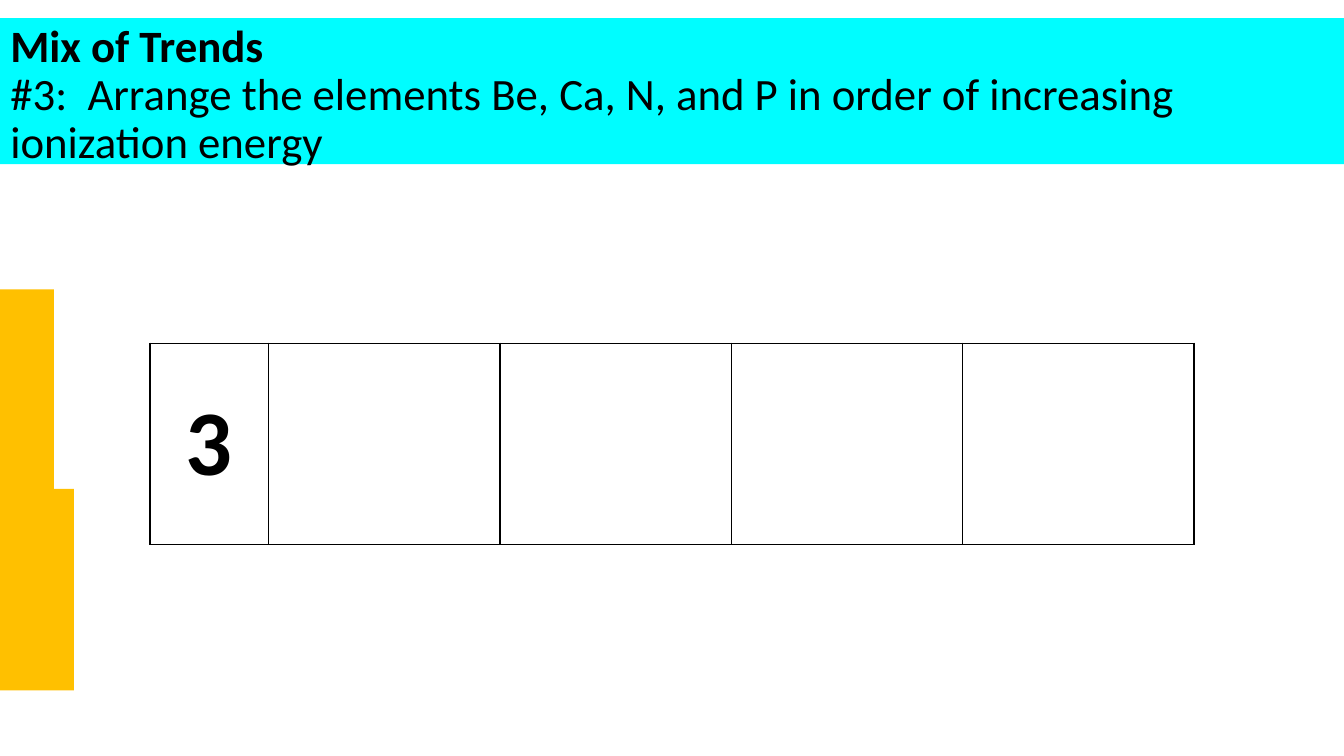
from lxml import etree
from pptx import Presentation
from pptx.dml.color import RGBColor
from pptx.enum.shapes import MSO_SHAPE
from pptx.enum.text import MSO_ANCHOR, PP_ALIGN
from pptx.oxml.ns import qn
from pptx.util import Cm, Pt

RECTANGLE = MSO_SHAPE.RECTANGLE
TOP, MIDDLE = MSO_ANCHOR.TOP, MSO_ANCHOR.MIDDLE
LEFT, CENTER = PP_ALIGN.LEFT, PP_ALIGN.CENTER
BLACK, CYAN, AMBER = "000000", "00FDFF", "FFC000"


def add_bar(left, top, width, height, color):
    bar = page.shapes.add_shape(RECTANGLE, Cm(left), Cm(top), Cm(width), Cm(height))
    bar.shadow.inherit = False
    bar.fill.solid()
    bar.fill.fore_color.rgb = RGBColor.from_string(color)
    bar.line.fill.background()
    return bar


def add_span(para, text, size, bold):
    span = para.add_run()
    span.text = text
    span.font.name = "Calibri"
    span.font.size = Pt(size)
    span.font.bold = bold
    span.font.color.rgb = RGBColor.from_string(BLACK)


deck = Presentation()
deck.slide_width, deck.slide_height = Cm(33.87), Cm(19.05)
page = deck.slides.add_slide(deck.slide_layouts[6])

# Question banner
banner = add_bar(0, 0.46, 33.87, 3.68, CYAN)
frame = banner.text_frame
frame.word_wrap = True
frame.vertical_anchor = TOP
frame.margin_left = frame.margin_right = Cm(0.26)
frame.margin_top, frame.margin_bottom = Cm(0.13), Cm(0)
para = frame.paragraphs[0]
para.alignment = LEFT
para.line_spacing = 0.9
add_span(para, "Mix of Trends", 32, True)
para.add_line_break()
add_span(para, "#3:  Arrange the elements Be, Ca, N, and P in order of increasing ionization energy", 32, False)

# Two equal tiles sliding in over the left edge
for left, top in ((-4.57, 12.32), (-5.07, 7.29)):
    add_bar(left, top, 6.43, 5.08, AMBER)

# Answer row: a number and four empty boxes
column_widths = [2.99] + [5.83] * 4
answer = page.shapes.add_table(
    1, len(column_widths), Cm(3.78), Cm(8.65), Cm(sum(column_widths)), Cm(5.08)
).table
answer.first_row = answer.horz_banding = False
for column, width in zip(answer.columns, column_widths):
    column.width = Cm(width)

for cell in answer.iter_cells():
    cell.vertical_anchor = MIDDLE
    properties = cell._tc.get_or_add_tcPr()
    for side in ("a:lnL", "a:lnR", "a:lnT", "a:lnB"):
        border = etree.SubElement(properties, qn(side), w=str(Pt(1)))
        paint = etree.SubElement(border, qn("a:solidFill"))
        etree.SubElement(paint, qn("a:srgbClr"), val=BLACK)
    cell.fill.background()

para = answer.cell(0, 0).text_frame.paragraphs[0]
para.alignment = CENTER
add_span(para, "3", 66, True)

deck.save("out.pptx")
